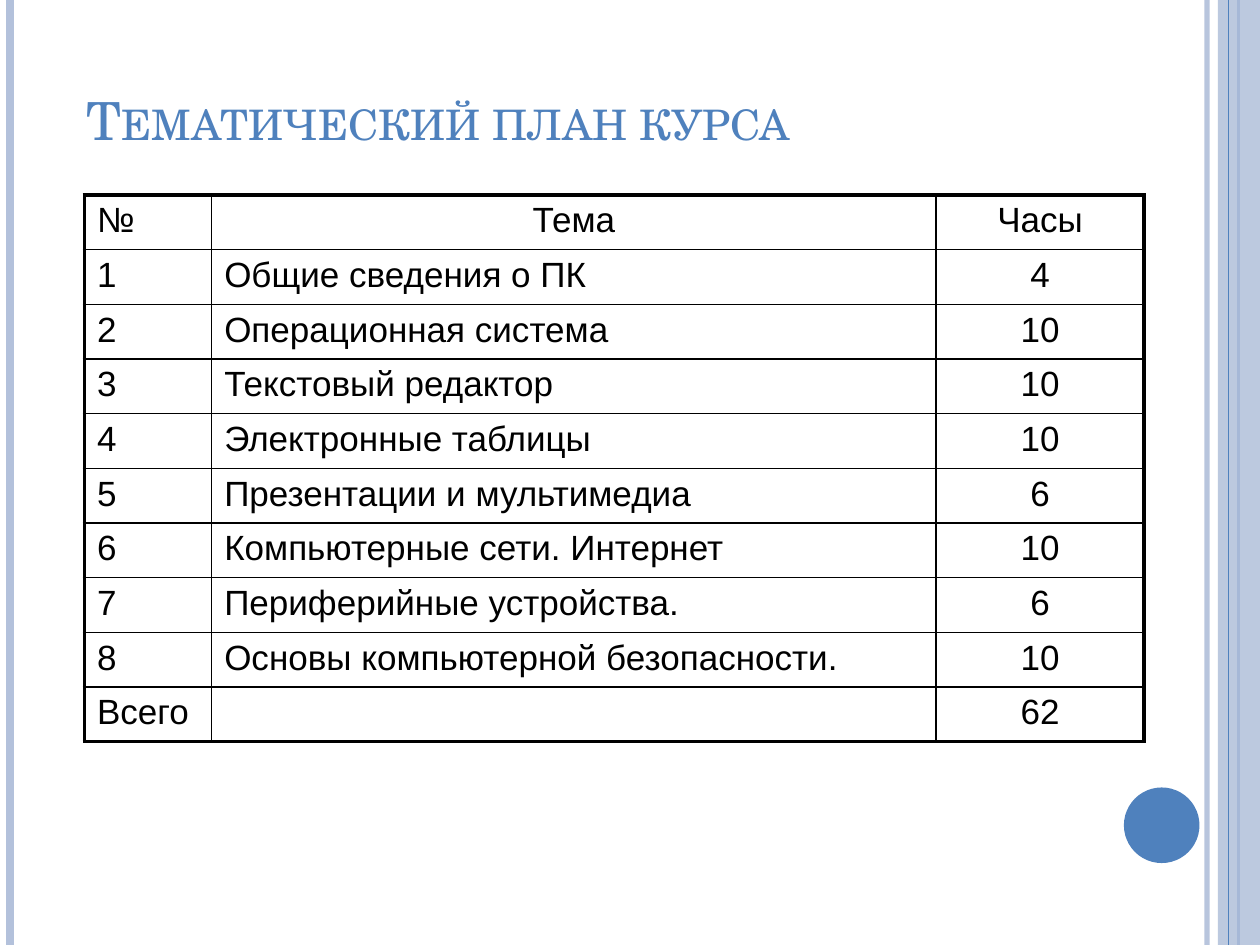
from lxml import etree
from pptx import Presentation
from pptx.dml.color import RGBColor
from pptx.enum.shapes import MSO_CONNECTOR, MSO_SHAPE
from pptx.enum.text import MSO_ANCHOR, PP_ALIGN
from pptx.oxml.ns import qn
from pptx.util import Pt

STRAIGHT = MSO_CONNECTOR.STRAIGHT
RECT, OVAL = MSO_SHAPE.RECTANGLE, MSO_SHAPE.OVAL
BOTTOM = MSO_ANCHOR.BOTTOM
LEFT, CENTER = PP_ALIGN.LEFT, PP_ALIGN.CENTER
BLUE, PALE, BLACK = "4F81BD", "B3C1DB", "000000"
W, H = 720, 540


def rgb(value):
    return RGBColor.from_string(value)


def set_alpha(element, percent):
    color = next(element.iter(qn("a:srgbClr")))
    etree.SubElement(color, qn("a:alpha")).set("val", str(percent * 1000))


prs = Presentation()
prs.slide_width, prs.slide_height = Pt(W), Pt(H)
s = prs.slides.add_slide(prs.slide_layouts[6])

# Vertical stripes, with the wide band between them: x, width, color, opacity
stripes = [
    (689.76, 3, PALE, 93),
    (5.76, 4.5, PALE, 100),
    (707.76, 1.5, BLUE, 100),
    (696, 24, PALE, 87),
    (702, 0.75, BLUE, 100),
]
for x, width, color, alpha in stripes:
    if width > 5:
        band = s.shapes.add_shape(RECT, Pt(x), 0, Pt(width), Pt(H))
        band.shadow.inherit = False
        band.line.fill.background()
        band.fill.solid()
        band.fill.fore_color.rgb = rgb(color)
        set_alpha(band.fill._xPr, alpha)
        continue
    line = s.shapes.add_connector(STRAIGHT, Pt(x), 0, Pt(x), Pt(H))
    line.line.width = Pt(width)
    line.line.color.rgb = rgb(color)
    etree.SubElement(line._element.spPr, qn("a:effectLst"))
    if alpha < 100:
        set_alpha(line._element.spPr, alpha)

# Circle in the corner
circle = s.shapes.add_shape(OVAL, Pt(642.24), Pt(450), Pt(43.2), Pt(43.2))
circle.shadow.inherit = False
circle.line.fill.background()
circle.fill.solid()
circle.fill.fore_color.rgb = rgb(BLUE)

# Title
tf = s.shapes.add_textbox(Pt(42.48), 0, Pt(624.24), Pt(90)).text_frame
tf.word_wrap = True
tf.vertical_anchor = BOTTOM
p = tf.paragraphs[0]
p.font.size, p.font.name = Pt(30), "TeX Gyre Schola"
p.font.color.rgb = rgb(BLUE)
r = p.add_run()
r.text = "Тематический план курса"
r._r.get_or_add_rPr().set("cap", "small")

# Course plan table
rows = [
    ("№", "Тема", "Часы"),
    ("1", "Общие сведения о ПК", "4"),
    ("2", "Операционная система", "10"),
    ("3", "Текстовый редактор", "10"),
    ("4", "Электронные таблицы", "10"),
    ("5", "Презентации и мультимедиа", "6"),
    ("6", "Компьютерные сети. Интернет", "10"),
    ("7", "Периферийные устройства.", "6"),
    ("8", "Основы компьютерной безопасности.", "10"),
    ("Всего", "", "62"),
]
col_widths = [72.72, 414, 118.8]
row_height = 29.55
last_row, last_col = len(rows) - 1, len(col_widths) - 1
table = s.shapes.add_table(len(rows), len(col_widths), Pt(48.24), Pt(111.4),
                           Pt(sum(col_widths)), Pt(row_height * len(rows))).table
table.first_row = table.horz_banding = False
for column, width in zip(table.columns, col_widths):
    column.width = Pt(width)

for i, row in enumerate(rows):
    table.rows[i].height = Pt(row_height)
    for j, text in enumerate(row):
        cell = table.cell(i, j)
        p = cell.text_frame.paragraphs[0]
        p.alignment = CENTER if j == 2 or (i == 0 and j == 1) else LEFT
        p.font.size, p.font.name = Pt(20), "Arial"
        p.font.color.rgb = rgb(BLACK)
        if text:
            p.add_run().text = text

        # Thick outer frame, thin inner grid; borders come before the fill
        tcPr = cell._tc.get_or_add_tcPr()
        outer = {"L": j == 0, "R": j == last_col, "T": i == 0, "B": i == last_row}
        for side, is_outer in outer.items():
            ln = etree.SubElement(tcPr, qn("a:ln" + side))
            ln.set("w", str(Pt(2.25 if is_outer else 1)))
            fill = etree.SubElement(ln, qn("a:solidFill"))
            etree.SubElement(fill, qn("a:srgbClr")).set("val", BLACK)
        cell.fill.background()

prs.save("out.pptx")
